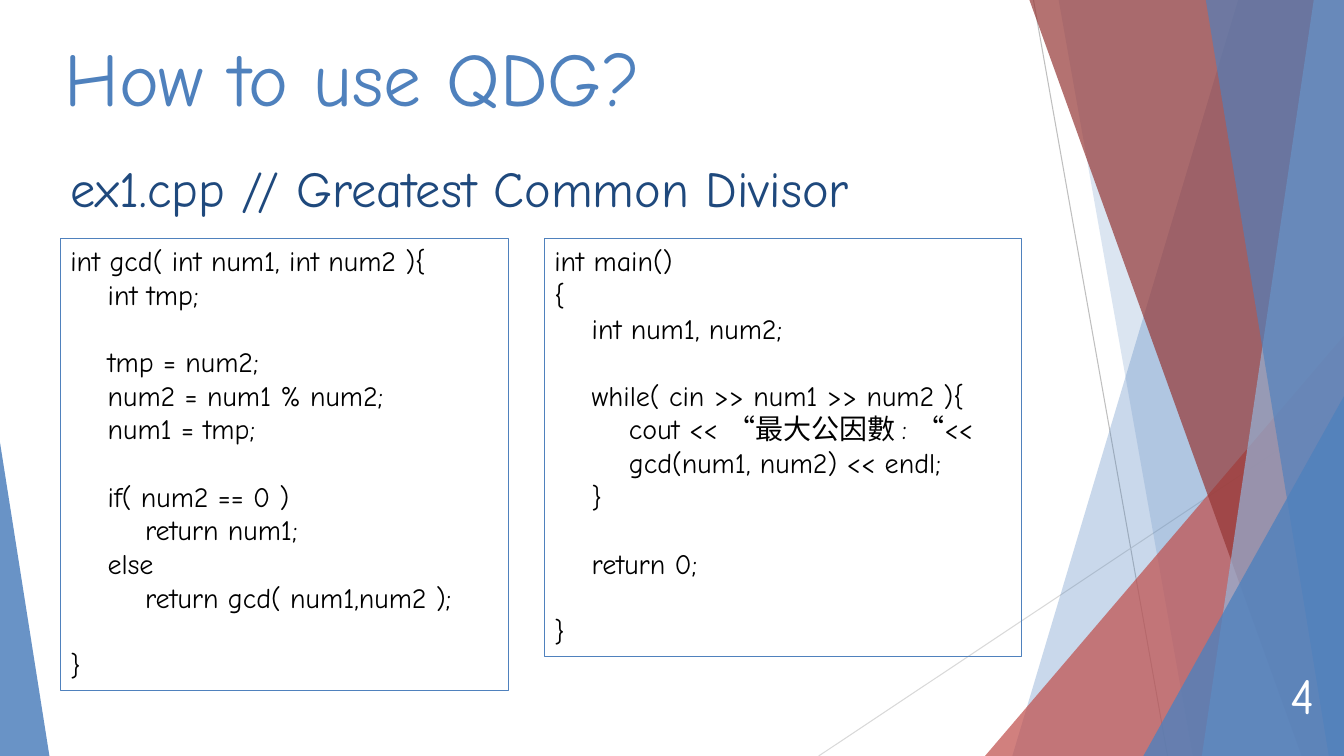
import pptx
import pptx.util
import pptx.dml.color
import pptx.enum.shapes
import pptx.enum.text
import pptx.oxml.ns
import lxml.etree

Inches = pptx.util.Inches
Pt = pptx.util.Pt
ALIGN = pptx.enum.text.PP_ALIGN
ANCHOR = pptx.enum.text.MSO_ANCHOR
SHAPES = pptx.enum.shapes.MSO_SHAPE

FONT = "Comic Neue"
BLUE, RED, NAVY = "4F81BD", "C0504D", "1F497D"
WIDTH, HEIGHT = 13.33, 7.5
INDENT = 0.37       # one level of code
BLANK_LINE = 24     # points left where the code skips a line

# Each code line: indent level, skipped lines above, text
GCD_CODE = [
    (0, 0, "int gcd( int num1, int num2 ){"),
    (1, 0, "int tmp;"),
    (1, 1, "tmp = num2;"),
    (1, 0, "num2 = num1 % num2;"),
    (1, 0, "num1 = tmp;"),
    (1, 1, "if( num2 == 0 )"),
    (2, 0, "return num1;"),
    (1, 0, "else"),
    (2, 0, "return gcd( num1,num2 );"),
    (0, 1, "}"),
]
MAIN_CODE = [
    (0, 0, "int main()"),
    (0, 0, "{"),
    (1, 0, "int num1, num2;"),
    (1, 1, "while( cin >> num1 >> num2 ){"),
    (2, 0, "cout << “最大公因數 : “<<"),
    (2, 0, "gcd(num1, num2) << endl;"),
    (1, 0, "}"),
    (1, 1, "return 0;"),
    (0, 1, "}"),
]


def rgb(color):
    return pptx.dml.color.RGBColor.from_string(color)


def sub(parent, tag, **attributes):
    return lxml.etree.SubElement(parent, pptx.oxml.ns.qn(tag), **attributes)


def add_run(paragraph, text, size, color):
    run = paragraph.add_run()
    run.text = text
    run.font.name = FONT
    run.font.size = Pt(size)
    run.font.color.rgb = rgb(color)


def paint(shape, color, opacity):
    """Fill without outline or shadow; opacity in percent."""
    shape.shadow.inherit = False
    shape.line.fill.background()
    shape.fill.solid()
    shape.fill.fore_color.rgb = rgb(color)
    fill_color = shape.fill._xPr.find(".//" + pptx.oxml.ns.qn("a:srgbClr"))
    sub(fill_color, "a:alpha", val=str(opacity * 1000))


def add_thin_line(slide, x1, y1, x2, y2, color):
    thin_line = slide.shapes.add_connector(
        pptx.enum.shapes.MSO_CONNECTOR.STRAIGHT,
        Inches(x1), Inches(y1), Inches(x2), Inches(y2))
    thin_line.line.color.rgb = rgb(color)
    thin_line.line.width = Pt(0.75)
    sub(thin_line._element.spPr, "a:effectLst")


def add_band(slide, top_x, bottom_x, color, opacity):
    """Slanted left edge, reaching to the right edge of the slide."""
    builder = slide.shapes.build_freeform(Inches(top_x), 0)
    builder.add_line_segments([
        (Inches(WIDTH), 0),
        (Inches(WIDTH), Inches(HEIGHT)),
        (Inches(bottom_x), Inches(HEIGHT)),
    ], close=True)
    paint(builder.convert_to_shape(), color, opacity)


def add_corner(slide, left, top, width, apex, color, opacity):
    """Triangle standing on the bottom edge of the slide."""
    corner = slide.shapes.add_shape(
        SHAPES.ISOSCELES_TRIANGLE, Inches(left), Inches(top),
        Inches(width), Inches(HEIGHT - top))
    corner.adjustments[0] = apex
    paint(corner, color, opacity)


def add_label(slide, left, top, width, height, text, size, color,
              align=ALIGN.LEFT, anchor=ANCHOR.TOP):
    label = slide.shapes.add_textbox(
        Inches(left), Inches(top), Inches(width), Inches(height)).text_frame
    label.word_wrap = True
    label.vertical_anchor = anchor
    label.paragraphs[0].alignment = align
    add_run(label.paragraphs[0], text, size, color)


def add_code_box(slide, left, width, height, code):
    box = slide.shapes.add_shape(
        SHAPES.RECTANGLE, Inches(left), Inches(2.37),
        Inches(width), Inches(height))
    box.shadow.inherit = False
    box.fill.background()
    box.line.color.rgb = rgb(BLUE)
    box.line.width = Pt(0.75)
    frame = box.text_frame
    frame.word_wrap = True
    frame.vertical_anchor = ANCHOR.TOP
    for number, (level, skipped, text) in enumerate(code):
        line = frame.add_paragraph() if number else frame.paragraphs[0]
        line.alignment = ALIGN.LEFT
        line.space_before = Pt(skipped * BLANK_LINE)
        line._p.get_or_add_pPr().set("marL", str(Inches(level * INDENT)))
        add_run(line, text, 20, "000000")


def set_title(slide, text):
    title = slide.shapes.title
    title.left, title.top = Inches(0.54), Inches(0.26)
    title.width, title.height = Inches(9.4), Inches(1.44)
    frame = title.text_frame
    frame.auto_size = pptx.enum.text.MSO_AUTO_SIZE.NONE
    frame.vertical_anchor = ANCHOR.TOP
    frame.paragraphs[0].alignment = ALIGN.LEFT
    add_run(frame.paragraphs[0], text, 54, BLUE)


def add_backdrop(slide):
    add_thin_line(slide, 10.25, 0, 11.58, HEIGHT, "BFBFBF")
    add_thin_line(slide, WIDTH, 4.03, 8.12, HEIGHT, "D9D9D9")
    add_band(slide, 12.28, 10.04, BLUE, 30)
    add_band(slide, 10.5, 11.83, BLUE, 20)
    add_corner(slide, 9.77, 3.33, 3.56, 1, RED, 72)
    add_band(slide, 10.21, 12.91, "953735", 70)
    add_band(slide, 13.03, 11.92, "95B3D7", 70)
    add_band(slide, 11.96, 13.18, BLUE, 65)
    add_corner(slide, 11.34, 3.93, 1.99, 1, BLUE, 80)
    add_corner(slide, 0, 4.39, 0.49, 0, BLUE, 85)


def main():
    deck = pptx.Presentation()
    deck.slide_width, deck.slide_height = Inches(WIDTH), Inches(HEIGHT)
    slide = deck.slides.add_slide(deck.slide_layouts.get_by_name("Title Only"))

    # Slanted bands and corners
    add_backdrop(slide)

    # Headings and page number
    set_title(slide, "How to use QDG?")
    add_label(slide, 11.94, 6.45, 1.2, 0.88, "4", 36, "FFFFFF",
              ALIGN.RIGHT, ANCHOR.MIDDLE)
    add_label(slide, 0.6, 1.51, 8.97, 0.71,
              "ex1.cpp // Greatest Common Divisor", 36, NAVY)

    # Program listing
    add_code_box(slide, 0.6, 4.44, 4.48, GCD_CODE)
    add_code_box(slide, 5.4, 4.73, 4.14, MAIN_CODE)

    deck.save("out.pptx")


if __name__ == "__main__":
    main()
